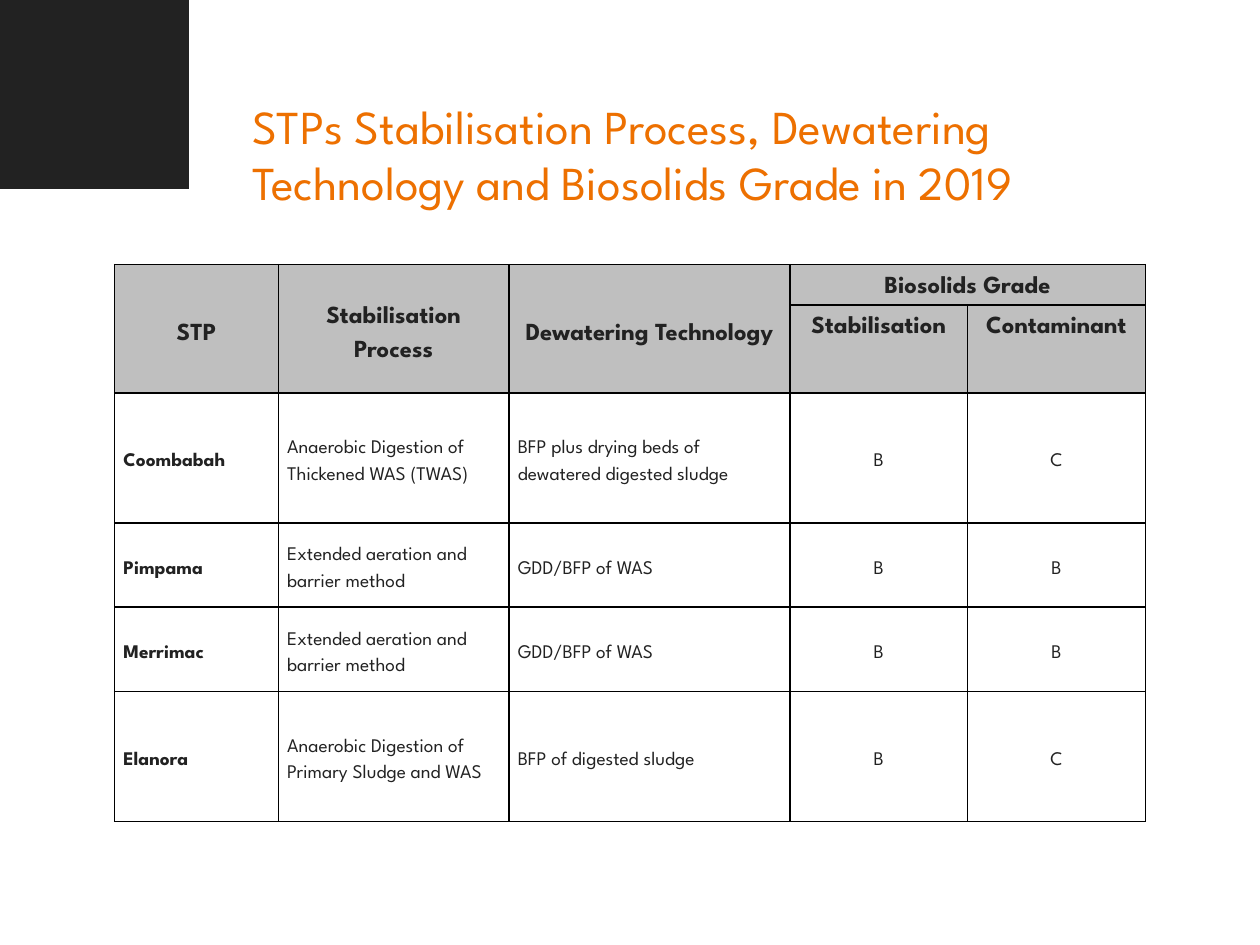
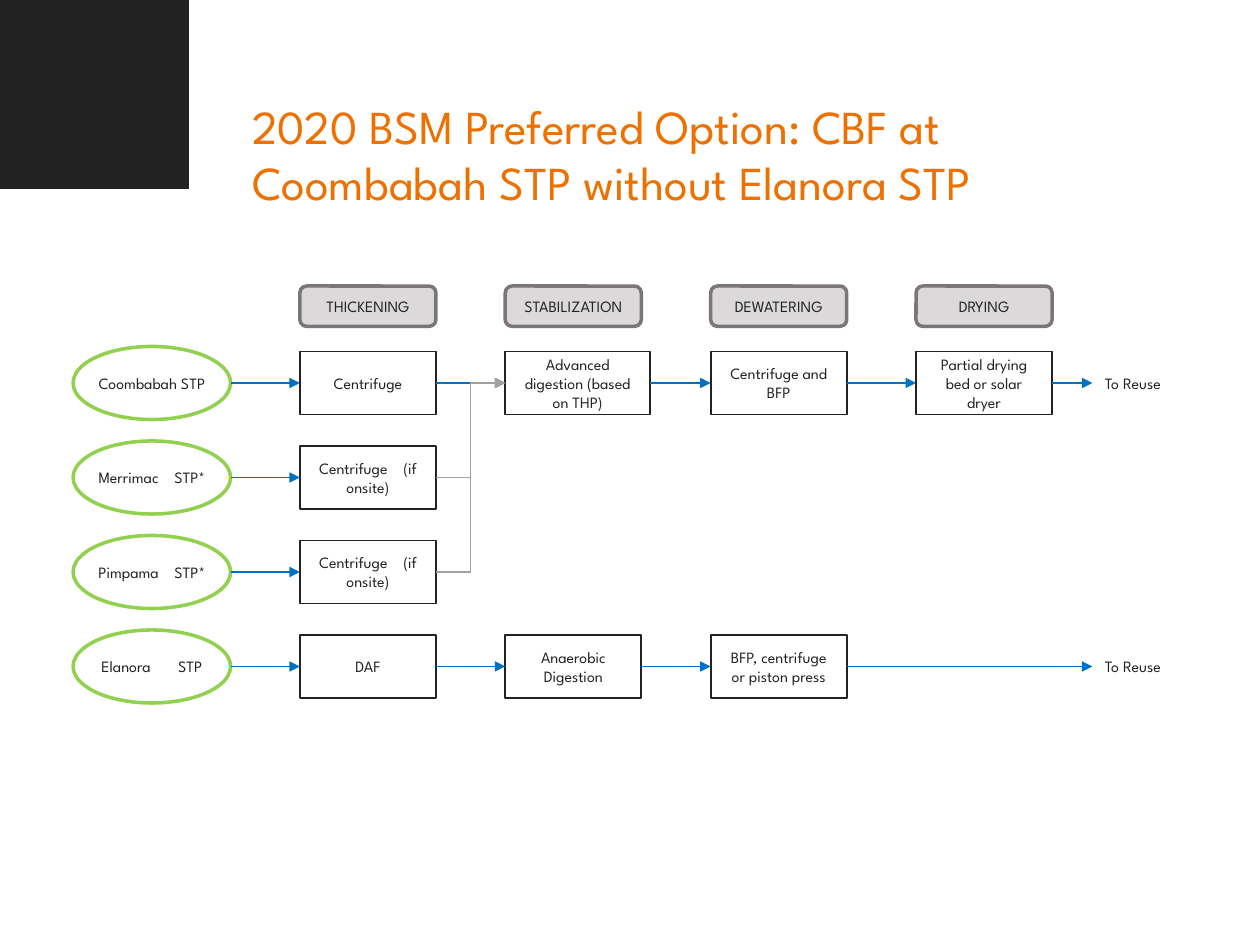
from lxml import etree
from pptx import Presentation
from pptx.dml.color import RGBColor
from pptx.enum.shapes import MSO_CONNECTOR, MSO_SHAPE
from pptx.enum.text import MSO_ANCHOR, MSO_AUTO_SIZE, PP_ALIGN
from pptx.oxml.ns import qn
from pptx.util import Inches, Pt

RECT, ROUND, OVAL = MSO_SHAPE.RECTANGLE, MSO_SHAPE.ROUNDED_RECTANGLE, MSO_SHAPE.OVAL
STRAIGHT, ELBOW = MSO_CONNECTOR.STRAIGHT, MSO_CONNECTOR.ELBOW
LEFT, CENTER = PP_ALIGN.LEFT, PP_ALIGN.CENTER
TOP, MIDDLE = MSO_ANCHOR.TOP, MSO_ANCHOR.MIDDLE
LEFT_SIDE, RIGHT_SIDE = 1, 3

FONT = "League Spartan"
COLORS = {
    "ink": "222222", "title": "ED7000", "header": "BFBFBF", "border": "000000",
    "plant": "92D050", "stage": "DBD9D9", "stage_line": "7C7776",
    "flow": "0070C0", "merge": "A4A09F",
}


def rgb(name):
    return RGBColor.from_string(COLORS[name])


class Deck:
    """Shared style and current slide; all lengths are percent of the slide."""

    def __init__(self):
        self.prs = Presentation()
        self.prs.slide_width, self.prs.slide_height = Inches(10), Inches(7.5)
        self.s = None

    def x(self, pct):
        return round(self.prs.slide_width * pct / 100)

    def y(self, pct):
        return round(self.prs.slide_height * pct / 100)

    def box(self, x, y, w, h):
        return self.x(x), self.y(y), self.x(w), self.y(h)

    def style(self, p, size, color="ink", bold=False, align=CENTER):
        p.alignment = align
        f = p.font
        f.name, f.size, f.bold = FONT, Pt(size), bold
        f.color.rgb = rgb(color)

    def slide(self, title):
        self.s = self.prs.slides.add_slide(self.prs.slide_layouts[5])
        # Corner block
        self.shape(RECT, (0, 0, 15, 20), fill="ink")
        # Title
        sp = self.s.shapes.title
        sp.left, sp.top, sp.width, sp.height = self.box(20, 12.13, 74.2, 8.27)
        tf = sp.text_frame
        tf.text = title
        tf.word_wrap, tf.auto_size = True, MSO_AUTO_SIZE.NONE
        tf.vertical_anchor = MIDDLE
        tf.margin_left = tf.margin_right = tf.margin_top = tf.margin_bottom = 0
        self.style(tf.paragraphs[0], 27, "title", align=LEFT)

    def shape(self, kind, box, text="", fill=None, line=None, width=1, gap=6.75):
        """Preset shape; a bar in the text marks a space widened by gap points."""
        sp = self.s.shapes.add_shape(kind, *self.box(*box))
        sp.shadow.inherit = False
        if fill:
            sp.fill.solid()
            sp.fill.fore_color.rgb = rgb(fill)
        else:
            sp.fill.background()
        if line:
            sp.line.color.rgb = rgb(line)
            sp.line.width = Pt(width)
        else:
            sp.line.fill.background()
        if text:
            tf = sp.text_frame
            tf.word_wrap, tf.vertical_anchor = True, MIDDLE
            if kind == OVAL:
                tf.margin_left = tf.margin_right = 0
            p = tf.paragraphs[0]
            for i, part in enumerate(text.split("|")):
                if i:
                    r = p.add_run()
                    r.text = " "
                    r._r.get_or_add_rPr().set("spc", str(round(gap * 100)))
                p.add_run().text = part
            self.style(p, 9)
        return sp

    def label(self, box, text):
        sp = self.s.shapes.add_textbox(*self.box(*box))
        tf = sp.text_frame
        tf.word_wrap, tf.auto_size = False, MSO_AUTO_SIZE.SHAPE_TO_FIT_TEXT
        tf.text = text
        self.style(tf.paragraphs[0], 9, align=LEFT)
        return sp

    def arrow(self, start, end, kind=STRAIGHT, color="flow"):
        """Arrow from the right side of start to the left side of end."""
        c = self.s.shapes.add_connector(
            kind, start.left + start.width, start.top + start.height // 2,
            end.left, end.top + end.height // 2)
        # Side 3 of an ellipse is not its right-hand middle
        if start.auto_shape_type != OVAL:
            c.begin_connect(start, RIGHT_SIDE)
        c.end_connect(end, LEFT_SIDE)
        c.line.color.rgb = rgb(color)
        c.line.width = Pt(0.75)
        etree.SubElement(c.line._get_or_add_ln(), qn("a:tailEnd"), type="triangle")
        etree.SubElement(c._element.spPr, qn("a:effectLst"))

    def cell(self, cell, text, size, bold, align, anchor, fill):
        cell.margin_left = cell.margin_right = Inches(0.07)
        cell.margin_top = cell.margin_bottom = 0
        cell.vertical_anchor = anchor
        if fill:
            cell.fill.solid()
            cell.fill.fore_color.rgb = rgb(fill)
        else:
            cell.fill.background()
        tc_pr = cell._tc.get_or_add_tcPr()
        for i, side in enumerate(("a:lnL", "a:lnR", "a:lnT", "a:lnB")):
            ln = etree.Element(qn(side), w=str(Pt(1)))
            solid = etree.SubElement(ln, qn("a:solidFill"))
            etree.SubElement(solid, qn("a:srgbClr"), val=COLORS["border"])
            tc_pr.insert(i, ln)
        p = cell.text_frame.paragraphs[0]
        p.text = text
        p.line_spacing, p.space_before, p.space_after = 1.5, Pt(3), Pt(3)
        self.style(p, size, bold=bold, align=align)

    def table(self, x, y, cols, rows, data, merges, header_rows):
        t = self.s.shapes.add_table(
            len(rows), len(cols), *self.box(x, y, sum(cols), sum(rows))).table
        for col, w in zip(t.columns, cols):
            col.width = self.x(w)
        for row, h in zip(t.rows, rows):
            row.height = self.y(h)
        for r, values in enumerate(data):
            for c, text in enumerate(values):
                head = r < header_rows
                self.cell(t.cell(r, c), text, 14 if head else 11,
                          head or c == 0,
                          CENTER if head or c > 2 else LEFT,
                          TOP if head and c > 2 else MIDDLE,
                          "header" if head else None)
        for first, last in merges:
            t.cell(*first).merge(t.cell(*last))


def grades_slide(d):
    d.slide("STPs Stabilisation Process, Dewatering Technology and Biosolids Grade in 2019")
    data = [
        ("STP", "Stabilisation Process", "Dewatering Technology", "Biosolids Grade", ""),
        ("", "", "", "Stabilisation", "Contaminant"),
        ("Coombabah", "Anaerobic Digestion of Thickened WAS (TWAS)",
         "BFP plus drying beds of dewatered digested sludge", "B", "C"),
        ("Pimpama", "Extended aeration and barrier method", "GDD/BFP of WAS", "B", "B"),
        ("Merrimac", "Extended aeration and barrier method", "GDD/BFP of WAS", "B", "B"),
        ("Elanora", "Anaerobic Digestion of Primary Sludge and WAS",
         "BFP of digested sludge", "B", "C"),
    ]
    merges = [((0, c), (1, c)) for c in range(3)] + [((0, 3), (0, 4))]
    d.table(9.1, 28, (13, 18.3, 22.3, 14.1, 14.1),
            (4.27, 9.33, 13.73, 8.93, 8.93, 13.73), data, merges, header_rows=2)


def option_slide(d):
    d.slide("2020 BSM Preferred Option: CBF at Coombabah STP without Elanora STP")
    step_w, step_h = 10.8, 6.67

    def col(i):
        return 23.8 + 16.3 * i

    def mid(row):
        return 40.53 + 10 * row

    # Stage headings
    for i, stage in enumerate(("THICKENING", "STABILIZATION", "DEWATERING", "DRYING")):
        d.shape(ROUND, (col(i), 30.27, step_w, 4.27), stage, "stage", "stage_line", 2)

    # One line of treatment steps per plant, with the gap inside its name
    lines = [
        ("Coombabah STP", 0, ("Centrifuge", "Advanced digestion (based on THP)",
                              "Centrifuge and BFP", "Partial drying bed or solar dryer")),
        ("Merrimac|STP*", 6.75, ("Centrifuge|(if onsite)",)),
        ("Pimpama|STP*", 6.75, ("Centrifuge|(if onsite)",)),
        ("Elanora|STP", 13.5, ("DAF", "Anaerobic Digestion",
                               "BFP, centrifuge or piston press")),
    ]
    chains = []
    for row, (plant, gap, steps) in enumerate(lines):
        chain = [d.shape(OVAL, (5.8, mid(row) - 3.87, 12.5, 7.73), plant,
                         line="plant", width=2, gap=gap)]
        for i, step in enumerate(steps):
            w = 11.5 if step.startswith("Advanced") else step_w
            chain.append(d.shape(RECT, (col(i), mid(row) - step_h / 2, w, step_h),
                                 step, line="ink"))
        if len(steps) > 1:
            chain.append(d.label((86.7, mid(row) - 1.67, 7.4, 3.33), "To Reuse"))
        for start, end in zip(chain, chain[1:]):
            d.arrow(start, end)
        chains.append(chain)

    # Sludge from the two smaller plants joins the digestion step
    digestion = chains[0][2]
    for chain in chains[1:3]:
        d.arrow(chain[-1], digestion, ELBOW, "merge")


def main():
    d = Deck()
    grades_slide(d)
    option_slide(d)
    d.prs.save("out.pptx")


if __name__ == "__main__":
    main()
